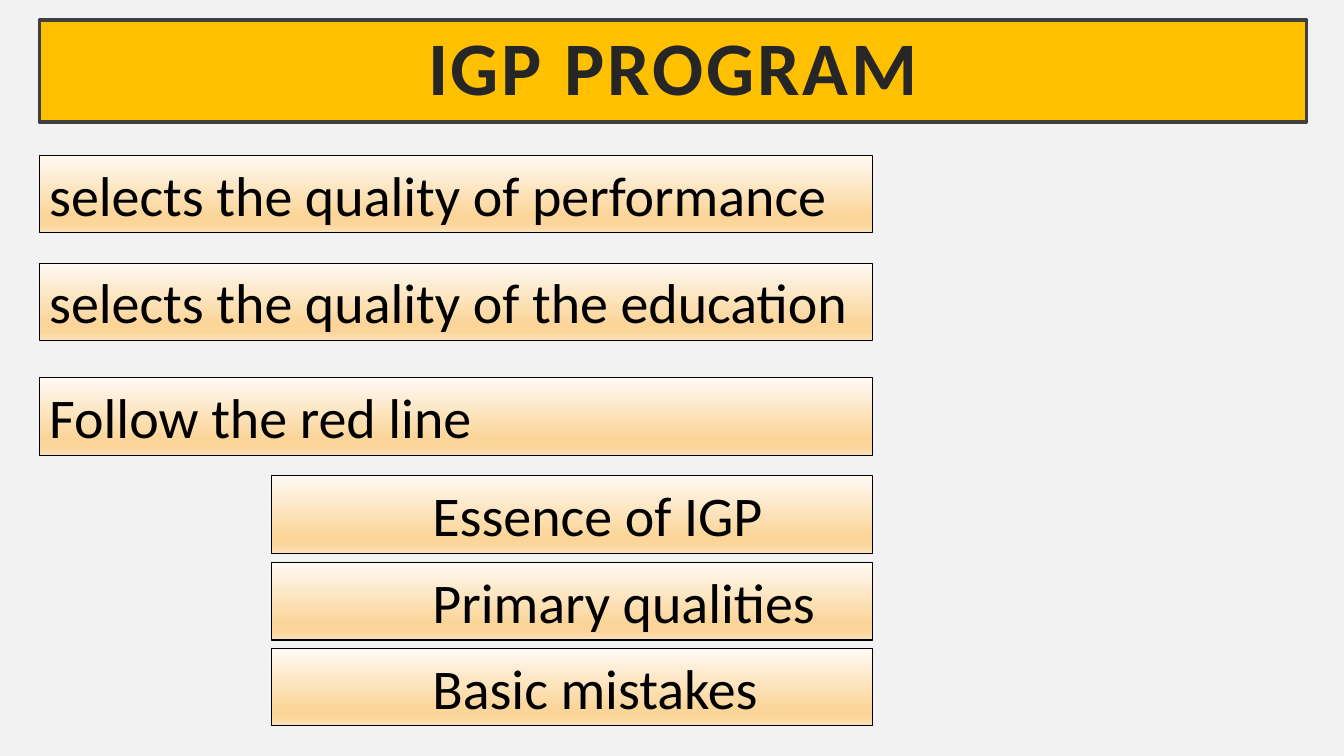
import lxml.etree
import pptx
import pptx.dml.color
import pptx.enum.shapes
import pptx.enum.text
import pptx.oxml.ns
import pptx.util

Inches = pptx.util.Inches
qn = pptx.oxml.ns.qn
GRADIENT = [(0, "FFFAF4"), (78, "FBD599"), (89, "FBD599"), (100, "FCE3BB")]


def color(value):
    return pptx.dml.color.RGBColor.from_string(value)


def add_box(text, left, top, width, height, *, line_color="000000", line_width=0.75,
            size=40, font_color="000000", bold=False, inset=None,
            align=pptx.enum.text.PP_ALIGN.LEFT, anchor=pptx.enum.text.MSO_ANCHOR.TOP):
    shape = slide.shapes.add_shape(
        pptx.enum.shapes.MSO_SHAPE.RECTANGLE,
        Inches(left), Inches(top), Inches(width), Inches(height))
    shape.shadow.inherit = False
    shape.line.color.rgb = color(line_color)
    shape.line.width = pptx.util.Pt(line_width)
    frame = shape.text_frame
    frame.word_wrap = True
    frame.vertical_anchor = anchor
    if inset is not None:
        frame.margin_left = frame.margin_right = Inches(inset)
        frame.margin_top = frame.margin_bottom = Inches(inset)
    paragraph = frame.paragraphs[0]
    paragraph.alignment = align
    run = paragraph.add_run()
    run.text = text
    run.font.name = "Calibri"
    run.font.size = pptx.util.Pt(size)
    run.font.bold = bold
    run.font.color.rgb = color(font_color)
    return shape


presentation = pptx.Presentation()
presentation.slide_width = Inches(13.33)
presentation.slide_height = Inches(7.5)
slide = presentation.slides.add_slide(presentation.slide_layouts[6])
slide.background.fill.solid()
slide.background.fill.fore_color.rgb = color("F2F2F2")

title = add_box("IGP PROGRAM", 0.39, 0.2, 12.57, 1.01, line_color="404040", line_width=2.5,
                size=54, font_color="262626", bold=True, inset=0.2,
                align=pptx.enum.text.PP_ALIGN.CENTER,
                anchor=pptx.enum.text.MSO_ANCHOR.MIDDLE)
title.fill.solid()
title.fill.fore_color.rgb = color("FFC000")
title_paragraph = title.text_frame.paragraphs[0]
title_paragraph.line_spacing = 0.9
title_paragraph.runs[0].font._element.set("spc", "200")

right_edge = 8.65
items = [
    ("selects the quality of performance", 0.39, 1.54, 0),
    ("selects the quality of the education", 0.39, 2.61, 0),
    ("Follow the red line", 0.39, 3.75, 0),
    ("Essence of IGP", 2.69, 4.72, 3),
    ("Primary qualities", 2.69, 5.58, 3),
    ("Basic mistakes", 2.69, 6.43, 3),
]
for text, left, top, level in items:
    box = add_box(text, left, top, right_edge - left, 0.77)
    box.text_frame.auto_size = pptx.enum.text.MSO_AUTO_SIZE.SHAPE_TO_FIT_TEXT
    if level:
        paragraph = box.text_frame.paragraphs[0]
        paragraph.level = level
        properties = paragraph._p.get_or_add_pPr()
        properties.set("marL", str(Inches(1.5)))
        properties.set("indent", "0")
    box.fill.gradient()
    box.fill.gradient_angle = 270
    stops = box._element.spPr.find(qn("a:gradFill")).find(qn("a:gsLst"))
    for stop in list(stops):
        stops.remove(stop)
    for position, value in GRADIENT:
        stop = lxml.etree.SubElement(stops, qn("a:gs"), pos=str(position * 1000))
        lxml.etree.SubElement(stop, qn("a:srgbClr"), val=value)

presentation.save("out.pptx")
